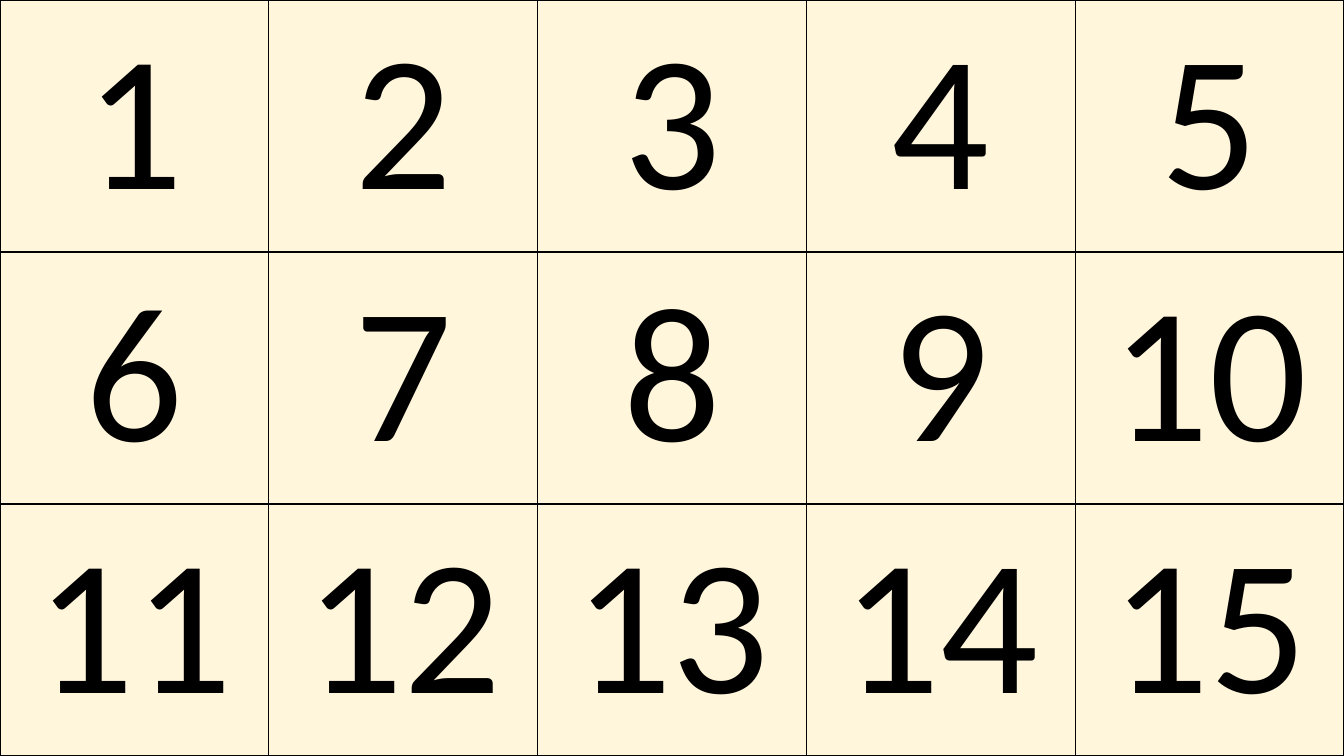
import pptx
import pptx.dml.color
import pptx.enum.text
import pptx.util
from lxml import etree
from pptx.oxml.ns import qn

Pt = pptx.util.Pt
CREAM = pptx.dml.color.RGBColor(0xFF, 0xF6, 0xDB)
BLACK = pptx.dml.color.RGBColor(0, 0, 0)
SLIDE_WIDTH, SLIDE_HEIGHT = 960, 540
ROWS, COLUMNS = 3, 5


def add_borders(cell):
    """Draw a 1 pt line on all four sides of a cell."""
    properties = cell._tc.get_or_add_tcPr()
    for side in ("lnL", "lnR", "lnT", "lnB"):
        border = etree.SubElement(properties, qn(f"a:{side}"), w=str(Pt(1)))
        fill = etree.SubElement(border, qn("a:solidFill"))
        etree.SubElement(fill, qn("a:srgbClr"), val=str(BLACK))


def fill_number_cell(cell, number):
    add_borders(cell)
    cell.fill.background()
    paragraph = cell.text_frame.paragraphs[0]
    paragraph.text = str(number)
    paragraph.alignment = pptx.enum.text.PP_ALIGN.CENTER
    font = paragraph.runs[0].font
    font.name = "Calibri"
    font.size = Pt(138)
    font.color.rgb = BLACK


def add_number_grid(slide, left, top, width, height):
    grid = slide.shapes.add_table(
        ROWS, COLUMNS, Pt(left), Pt(top), Pt(width), Pt(height)
    ).table
    grid.first_row = False
    grid.horz_banding = False
    for column in grid.columns:
        column.width = Pt(width / COLUMNS)
    for row in grid.rows:
        row.height = Pt(height / ROWS)
    for number, cell in enumerate(grid.iter_cells(), start=1):
        fill_number_cell(cell, number)


def main():
    presentation = pptx.Presentation()
    presentation.slide_width = Pt(SLIDE_WIDTH)
    presentation.slide_height = Pt(SLIDE_HEIGHT)
    slide = presentation.slides.add_slide(presentation.slide_layouts[6])

    # Background
    background = slide.background.fill
    background.solid()
    background.fore_color.rgb = CREAM

    # Numbers 1 to 15
    add_number_grid(slide, 0, 0, SLIDE_WIDTH, SLIDE_HEIGHT)
    presentation.save("out.pptx")


if __name__ == "__main__":
    main()
